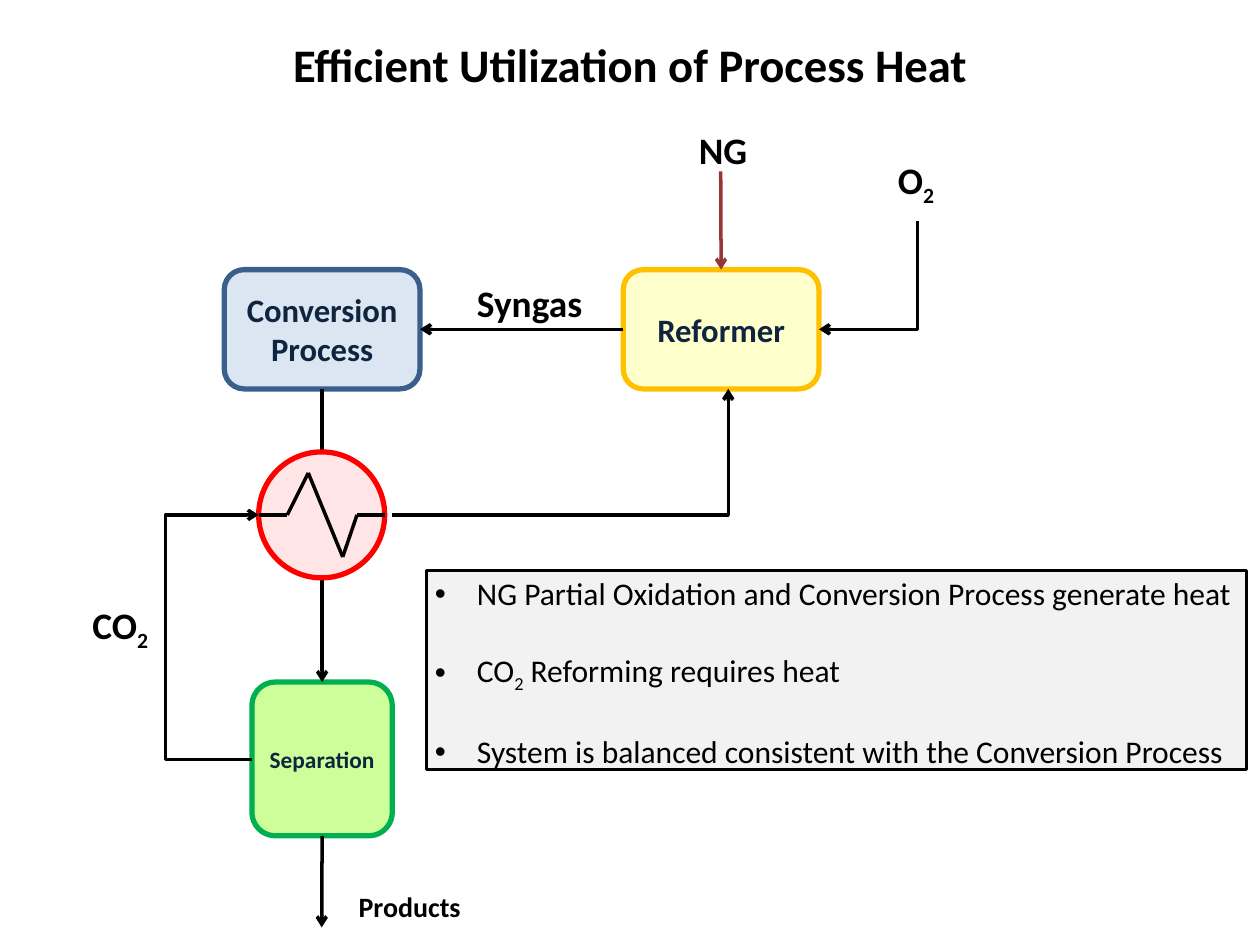
import pptx
import pptx.util
import pptx.dml.color
import pptx.enum.shapes
import pptx.enum.text
import pptx.oxml
import pptx.oxml.ns

Inches = pptx.util.Inches
SHAPES = pptx.enum.shapes.MSO_SHAPE
CONNECTORS = pptx.enum.shapes.MSO_CONNECTOR
ALIGN = pptx.enum.text.PP_ALIGN
TOP, LEFT, BOTTOM, RIGHT = range(4)
BLACK, NAVY = "000000", "0F243E"


def color(value):
    return pptx.dml.color.RGBColor.from_string(value)


def add_xml(parent, tag, **attributes):
    element = pptx.oxml.parse_xml(f"<a:{tag} {pptx.oxml.ns.nsdecls('a')}/>")
    for name, value in attributes.items():
        element.set(name, value)
    parent.append(element)
    return element


def add_runs(paragraph, text, size, ink=BLACK, bold=True):
    """Write text; parts between underscores become subscripts."""
    for index, part in enumerate(text.split("_")):
        if not part:
            continue
        run = paragraph.add_run()
        run.text = part
        font_format = {"name": "Calibri", "size": pptx.util.Pt(size), "bold": bold}
        for name, value in font_format.items():
            setattr(run.font, name, value)
        run.font.color.rgb = color(ink)
        if index % 2:
            run.font._element.set("baseline", "-25000")


def add_label(slide, box, text, size, wrap=False, align=ALIGN.LEFT):
    shape = slide.shapes.add_textbox(*map(Inches, box))
    frame_format = {
        "word_wrap": wrap,
        "auto_size": pptx.enum.text.MSO_AUTO_SIZE.SHAPE_TO_FIT_TEXT,
    }
    for name, value in frame_format.items():
        setattr(shape.text_frame, name, value)
    paragraph = shape.text_frame.paragraphs[0]
    paragraph.alignment = align
    add_runs(paragraph, text, size)


def add_box(slide, kind, box, fill, outline, width=4.5):
    shape = slide.shapes.add_shape(kind, *map(Inches, box))
    shape.shadow.inherit = False
    shape.fill.solid()
    shape.fill.fore_color.rgb = color(fill)
    shape.line.color.rgb = color(outline)
    shape.line.width = pptx.util.Pt(width)
    return shape


def add_step(slide, box, text, size, fill, outline):
    shape = add_box(slide, SHAPES.ROUNDED_RECTANGLE, box, fill, outline)
    frame = shape.text_frame
    frame.word_wrap = True
    frame.vertical_anchor = pptx.enum.text.MSO_ANCHOR.MIDDLE
    frame.paragraphs[0].alignment = ALIGN.CENTER
    add_runs(frame.paragraphs[0], text, size, NAVY)
    return shape


def add_line(slide, start, end, arrow="tailEnd", ink=BLACK, kind=CONNECTORS.STRAIGHT):
    points = map(Inches, (*start, *end))
    connector = slide.shapes.add_connector(kind, *points)
    connector.line.color.rgb = color(ink)
    connector.line.width = pptx.util.Pt(3)
    if arrow:
        add_xml(connector.line._get_or_add_ln(), arrow, type="arrow")
    add_xml(connector._element.spPr, "effectLst")
    return connector


def add_corner(slide, start, end, arrow="tailEnd"):
    """Line with one bend, horizontal first and then vertical."""
    connector = add_line(slide, start, end, arrow, kind=CONNECTORS.ELBOW)
    connector._element.spPr.prstGeom.set("prst", "bentConnector2")


def add_detour(slide, start, end, bend):
    """Line with two bends, passing through the horizontal position bend."""
    connector = add_line(slide, start, end, kind=CONNECTORS.ELBOW)
    ratio = (bend - start[0]) / (end[0] - start[0])
    guides = connector._element.spPr.prstGeom.get_or_add_avLst()
    add_xml(guides, "gd", name="adj1", fmla=f"val {round(ratio * 100000)}")


def add_exchanger(slide, box):
    left, top, width, height = box
    add_box(slide, SHAPES.OVAL, box, "FFE5E5", "FF0000")
    middle = top + height / 2
    rise = height / 3
    points = [
        (left, middle),
        (left + 0.34, middle),
        (left + 0.59, middle - rise),
        (left + 1, middle + rise),
        (left + 1.17, middle),
        (left + width, middle),
    ]
    for start, end in zip(points, points[1:]):
        add_line(slide, start, end, arrow=None)


def add_notes(slide, box, notes):
    shape = add_box(slide, SHAPES.RECTANGLE, box, "F2F2F2", BLACK, 2.25)
    frame = shape.text_frame
    frame.word_wrap = True
    frame.vertical_anchor = pptx.enum.text.MSO_ANCHOR.TOP
    for index, note in enumerate(notes):
        paragraph = frame.add_paragraph() if index else frame.paragraphs[0]
        paragraph.alignment = ALIGN.LEFT
        paragraph.space_before = pptx.util.Pt(33 if index else 0)
        properties = paragraph._p.get_or_add_pPr()
        properties.set("marL", str(Inches(0.5)))
        properties.set("indent", str(Inches(-0.5)))
        add_xml(properties, "buFont", typeface="Arial")
        add_xml(properties, "buChar", char="•")
        add_runs(paragraph, note, 27, bold=False)


def add_flow(slide, box):
    """Process diagram; every position is an offset from the box corner."""
    left, top = box[:2]

    def at(x, y, *size):
        return (left + x, top + y, *size)

    # Process steps
    step_size = (2.33, 1.42)
    conversion = add_step(slide, at(1.67, 1.75, *step_size), "Conversion Process",
                          28, "DCE6F2", "3A5F8C")
    reformer = add_step(slide, at(6.42, 1.75, *step_size), "Reformer",
                        28, "FFFFCC", "FFC000")
    separation = add_step(slide, at(2, 6.66, 1.67, 1.83), "Separation",
                          20, "CCFF99", "00B050")

    # Straight flows
    feed = add_line(slide, at(7.58, 0.58), at(7.58, 1.75), ink="953735")
    feed.end_connect(reformer, TOP)
    syngas = add_line(slide, at(6.42, 2.46), at(4, 2.46))
    syngas.begin_connect(reformer, LEFT)
    syngas.end_connect(conversion, RIGHT)
    effluent = add_line(slide, at(2.83, 3.17), at(2.83, 6.66))
    effluent.begin_connect(conversion, BOTTOM)
    effluent.end_connect(separation, TOP)
    products = add_line(slide, at(2.83, 8.49), at(2.83, 9.58))
    products.begin_connect(separation, BOTTOM)

    # Heat exchanger and bent flows
    add_exchanger(slide, at(2.08, 3.92, 1.5, 1.5))
    add_detour(slide, at(2, 7.58), at(2.08, 4.67), left + 0.97)
    add_corner(slide, at(3.67, 4.67), at(7.67, 3.17))
    add_corner(slide, at(8.75, 2.46), at(9.92, 1.17), arrow="headEnd")

    # Stream labels
    add_label(slide, at(7.22, 0, 0.78, 0.64), "NG", 32)
    add_label(slide, at(9.59, 0.36, 0.66, 0.64), "O_2_", 32)
    add_label(slide, at(4.58, 1.83, 1.5, 0.64), "Syngas", 32, wrap=True)
    add_label(slide, at(0, 5.66, 0.89, 0.64), "CO_2_", 32)
    add_label(slide, at(3.17, 9.08, 1.43, 0.5), "Products", 24)


def main():
    presentation = pptx.Presentation()
    presentation.slide_width = Inches(15)
    presentation.slide_height = Inches(11.25)
    slide = presentation.slides.add_slide(presentation.slide_layouts[6])
    add_label(slide, (0, 0.38, 15, 0.77), "Efficient Utilization of Process Heat",
              40, wrap=True, align=ALIGN.CENTER)
    add_flow(slide, (1, 1.46, 10.25, 9.58))
    add_notes(slide, (5.08, 6.79, 9.76, 2.37), [
        "NG Partial Oxidation and Conversion Process generate heat",
        "CO_2_ Reforming requires heat",
        "System is balanced consistent with the Conversion Process",
    ])
    presentation.save("out.pptx")


if __name__ == "__main__":
    main()
